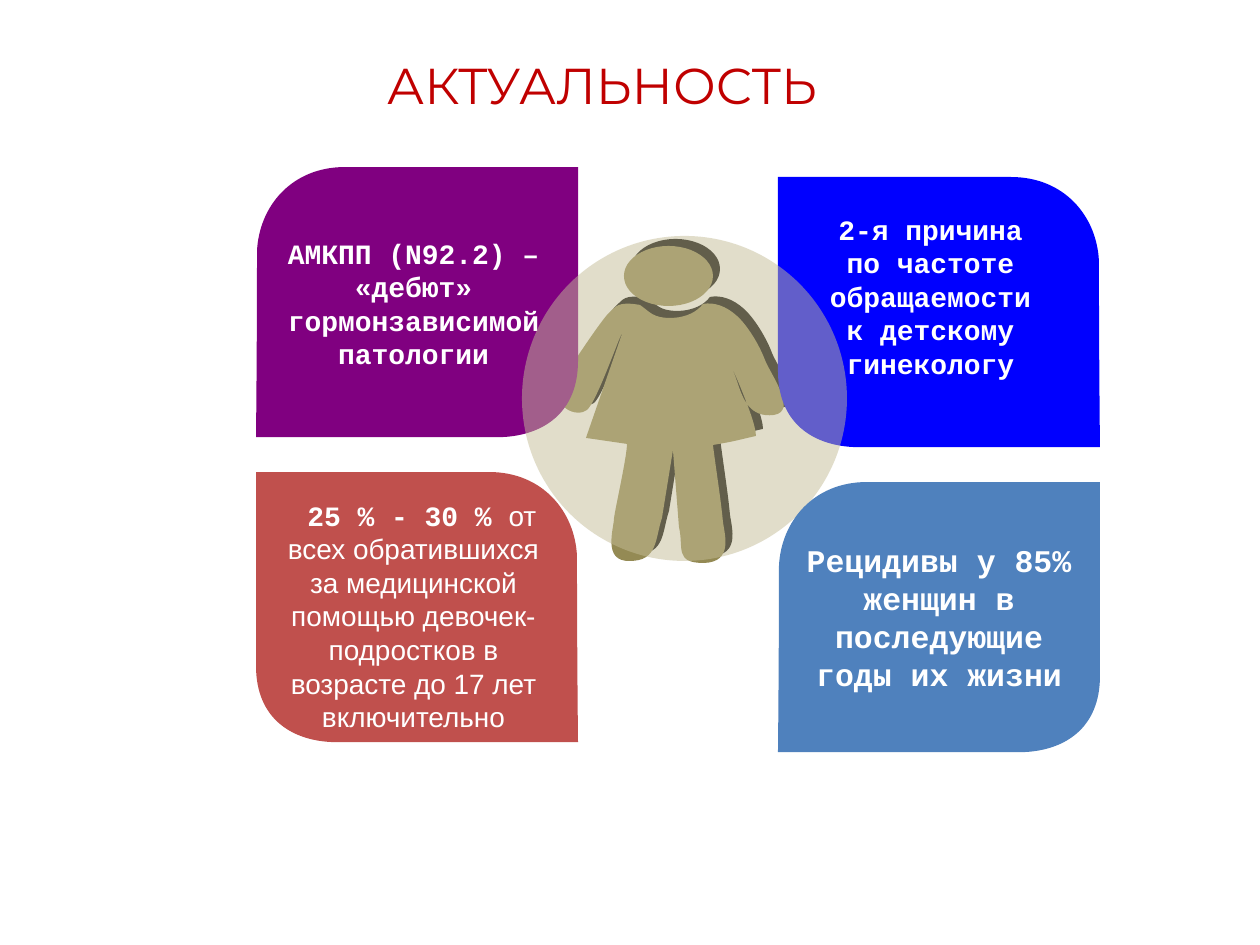
"""Builds the relevance slide: four leaf panels around a figure in a circle."""
import pptx
import pptx.util
import pptx.dml.color
import pptx.enum.shapes
import pptx.enum.text
from lxml import etree

PX = 914400 / 126
RGBColor = pptx.dml.color.RGBColor
OVAL = pptx.enum.shapes.MSO_SHAPE.OVAL
ANCHOR = pptx.enum.text.MSO_ANCHOR
CENTER = pptx.enum.text.PP_ALIGN.CENTER
RED = RGBColor(0xC0, 0x00, 0x00)
WHITE = RGBColor(0xFF, 0xFF, 0xFF)
OLIVE = RGBColor(0x94, 0x8A, 0x54)
SAND = RGBColor(0xC4, 0xBD, 0x97)
PURPLE = RGBColor(0x80, 0x00, 0x80)
BLUE = RGBColor(0x00, 0x00, 0xFF)
BRICK = RGBColor(0xC0, 0x50, 0x4D)
STEEL = RGBColor(0x4F, 0x81, 0xBD)
A = "{http://schemas.openxmlformats.org/drawingml/2006/main}"


def emu(*lengths):
    return [round(length * PX) for length in lengths]


def add_curved(start, segments):
    pen = shapes.build_freeform(*emu(*start))
    pen.add_line_segments([emu(*point) for segment in segments for point in segment], close=True)
    curved = pen.convert_to_shape()
    trace = next(curved._element.iter(A + "path"))
    lines = iter(trace.findall(A + "lnTo"))
    for segment in segments:
        controls = [next(lines) for _ in segment]
        if len(controls) == 3:
            bend = etree.Element(A + "cubicBezTo")
            controls[0].addprevious(bend)
            for control in controls:
                bend.append(control[0])
                trace.remove(control)
    return curved


deck = pptx.Presentation()
deck.slide_width, deck.slide_height = emu(1260, 945)
slide = deck.slides.add_slide(deck.slide_layouts[5])
shapes = slide.shapes

title = shapes.title
title.left, title.top, title.width, title.height = emu(35, 46, 1134, 76)
title.text_frame.text = "АКТУАЛЬНОСТЬ"
title.text_frame.vertical_anchor = ANCHOR.MIDDLE
heading = title.text_frame.paragraphs[0]
heading.alignment = CENTER
heading.font.name = "Montserrat"
heading.font.size = pptx.util.Pt(28.8)
heading.font.color.rgb = RED

body = add_curved((670, 318), [
    [(687, 318), (698, 311), (703, 304)],
    [(714, 302), (726, 306), (737, 316)],
    [(747, 325), (759, 344), (765, 360)],
    [(771, 375), (798, 411), (774, 415)],
    [(750, 418), (743, 399), (738, 384)],
    [(731, 363), (717, 334), (717, 334)],
    [(721, 343), (756, 417), (756, 436)],
    [(730, 442), (736, 441), (713, 445)],
    [(716, 469), (721, 500), (723, 522)],
    [(725, 536), (733, 562), (704, 563)],
    [(674, 563), (684, 548), (679, 527)],
    [(673, 450)],
    [(662, 518)],
    [(655, 539), (658, 561), (630, 561)],
    [(602, 562), (614, 528), (614, 519)],
    [(615, 509), (627, 457), (627, 444)],
    [(607, 441), (586, 438), (586, 438)],
    [(622, 334)],
    [(622, 329), (597, 402), (587, 410)],
    [(577, 418), (551, 408), (561, 383)],
    [(566, 373), (604, 316), (610, 312)],
    [(616, 307), (617, 301), (640, 305)],
    [(650, 312), (653, 318), (670, 318)],
])
head = shapes.add_shape(OVAL, *emu(624, 246, 89, 60))
painted = [(body, OLIVE), (head, OLIVE)]

LEAF_WIDTH = 322
LEAF_START = (247, 270)
LEAF_CURVES = [
    [(123, 270), (0, 270), (0, 270)],
    [(0, 270), (1, 178), (1, 84)],
    [(3, 40), (35, 0), (89, 0)],
    [(206, 0), (322, 0), (322, 0)],
    [(322, 0), (322, 97), (322, 194)],
    [(322, 246), (287, 268), (247, 270)],
]
MONO = "Courier New"
panels = [
    (256, 167, PURPLE, False, (266, 230, 295, 149), 16,
     [("АМКПП (N92.2) – «дебют» гормонзависимой патологии", MONO, True)]),
    (778, 177, BLUE, True, (807, 206, 247, 183), 16,
     [("2-я причина по частоте обращаемости к детскому гинекологу", MONO, True)]),
    (256, 472, BRICK, True, (266, 492, 295, 251), 16,
     [(" 25 % - 30 % ", MONO, True),
      ("от всех обратившихся за медицинской помощью девочек-подростков "
       "в возрасте до 17 лет включительно", "Arial", False)]),
    (778, 482, STEEL, False, None, 18,
     [("Рецидивы у 85% женщин в последующие годы их жизни", MONO, True)]),
]
for number, (left, top, color, mirrored, text_area, size, wording) in enumerate(panels):
    if number == 2:
        circle = shapes.add_shape(OVAL, *emu(522, 236, 325, 325))
        painted.append((circle, SAND))
    start, *curves = [
        [(left + (LEAF_WIDTH - x if mirrored else x), top + y) for x, y in points]
        for points in [[LEAF_START], *LEAF_CURVES]
    ]
    leaf = add_curved(start[0], curves)
    painted.append((leaf, color))
    if text_area:
        frame = shapes.add_textbox(*emu(*text_area)).text_frame
        frame.vertical_anchor = ANCHOR.TOP
    else:
        frame = leaf.text_frame
        frame.vertical_anchor = ANCHOR.MIDDLE
    frame.word_wrap = True
    statement = frame.paragraphs[0]
    statement.alignment = CENTER
    statement.line_spacing = pptx.util.Pt(size * 1.2)
    statement.font.size = pptx.util.Pt(size)
    statement.font.color.rgb = WHITE
    for words, face, bold in wording:
        run = statement.add_run()
        run.text = words
        run.font.name = face
        run.font.bold = bold

for part, color in painted:
    part.fill.solid()
    part.fill.fore_color.rgb = color
    part.line.fill.background()
    part.shadow.inherit = False

tint = circle._element.spPr.find(f"{A}solidFill/{A}srgbClr")
etree.SubElement(tint, A + "alpha", val="50000")
for figure_part in (body, head):
    effects = figure_part._element.spPr.find(A + "effectLst")
    cast = etree.SubElement(effects, A + "outerShdw", dist="72390", dir="18900000",
                            algn="ctr", rotWithShape="0")
    etree.SubElement(cast, A + "srgbClr", val="000000")

deck.save("out.pptx")
